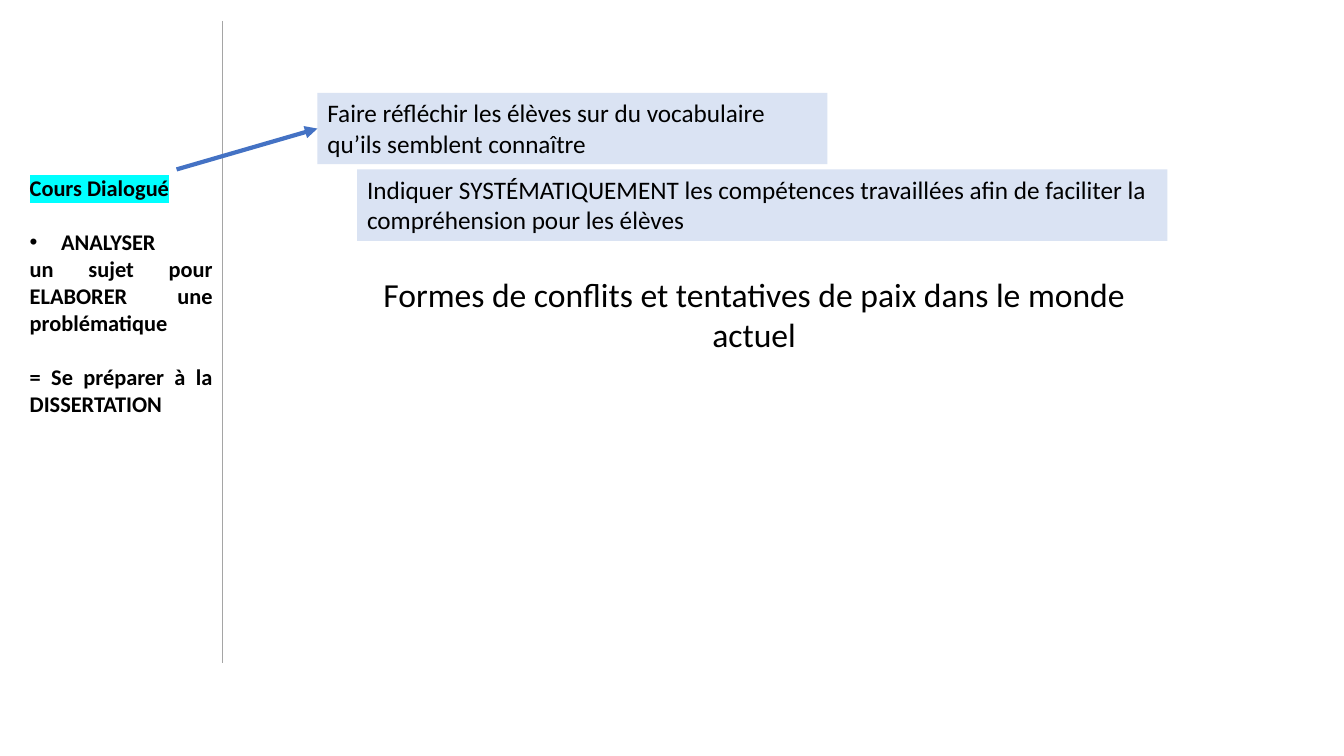
import pptx
import pptx.util
import pptx.dml.color
import pptx.enum.shapes
import pptx.enum.text
import pptx.oxml
import pptx.oxml.ns

Cm, Pt = pptx.util.Cm, pptx.util.Pt
Align = pptx.enum.text.PP_ALIGN
BLACK, PALE, BLUE, GREY, CYAN = "000000", "DAE3F3", "4472C4", "A5A5A5", "00FFFF"


def tint(code):
    """Turn a hex string into a colour."""
    return pptx.dml.color.RGBColor.from_string(code)


def node(tag, **attrs):
    """Make a drawing element with the given attributes."""
    item = pptx.oxml.parse_xml(f"<a:{tag} {pptx.oxml.ns.nsdecls('a')}/>")
    for key, value in attrs.items():
        item.set(key, value)
    return item


def write(para, text, size, bold=False, mark=None):
    """Add one run to a paragraph, highlighted if a mark colour is given."""
    run = para.add_run()
    run.text = text
    font = run.font
    font.name, font.size, font.bold = "Calibri", Pt(size), bold
    font.color.rgb = tint(BLACK)
    if mark:
        light = node("highlight")
        light.append(node("srgbClr", val=mark))
        run._r.rPr.find(pptx.oxml.ns.qn("a:solidFill")).addnext(light)


def frame(slide, box):
    """Add a wrapping text box and return its text frame."""
    text = slide.shapes.add_textbox(*map(Cm, box)).text_frame
    text.word_wrap = True
    return text


def draw_line(slide, start, end, color, width, arrow=False):
    """Draw a straight line, with an arrowhead at its end if asked."""
    line = slide.shapes.add_connector(
        pptx.enum.shapes.MSO_CONNECTOR.STRAIGHT, *map(Cm, start + end))
    line.line.color.rgb = tint(color)
    line.line.width = Pt(width)
    if arrow:
        line.line._get_or_add_ln().append(node("tailEnd", type="triangle"))
    line._element.spPr.append(node("effectLst"))


def draw_side(slide, box):
    """Write the skills column and draw the rule along its right edge."""
    left, top, width, _ = box
    size, gap = 16, 19.5
    rows = [
        ("Cours Dialogué", 0, CYAN, False),
        ("ANALYSER", gap, None, True),
        ("un sujet pour ELABORER une problématique", 0, None, False),
        ("= Se préparer à la DISSERTATION", gap, None, False),
    ]
    text = frame(slide, box)
    for index, (words, before, mark, dot) in enumerate(rows):
        para = text.add_paragraph() if index else text.paragraphs[0]
        para.alignment = Align.JUSTIFY
        if dot:
            props = para._p.get_or_add_pPr()
            props.set("marL", str(Cm(0.79)))
            props.set("indent", str(-Cm(0.79)))
            props.append(node("buFont", typeface="Arial"))
            props.append(node("buChar", char="•"))
        if before:
            para.space_before = Pt(before)
        write(para, words, size, True, mark)
    edge = left + width
    draw_line(slide, (edge, top - 3.74), (edge, top + 12.44), GREY, 1)


def draw_title(slide, box):
    """Write the centred subject of the lesson."""
    para = frame(slide, box).paragraphs[0]
    para.alignment = Align.CENTER
    write(para, "Formes de conflits et tentatives de paix dans le monde actuel", 24)


def draw_note(slide, box, words):
    """Draw a pale box holding one piece of advice."""
    note = slide.shapes.add_shape(
        pptx.enum.shapes.MSO_SHAPE.RECTANGLE, *map(Cm, box))
    note.shadow.inherit = False
    note.fill.solid()
    note.fill.fore_color.rgb = tint(PALE)
    note.line.fill.background()
    text = note.text_frame
    text.word_wrap = True
    text.vertical_anchor = pptx.enum.text.MSO_ANCHOR.TOP
    para = text.paragraphs[0]
    para.alignment = Align.LEFT
    write(para, words, 18)


def main():
    """Build the slide and save it."""
    deck = pptx.Presentation()
    deck.slide_width, deck.slide_height = Cm(33.87), Cm(19.05)
    slide = deck.slides.add_slide(deck.slide_layouts[6])
    side = (0.5, 4.27, 5.11, 6.4)
    think = (8, 2.34, 12.85, 1.8)
    skills = (9, 4.27, 20.42, 1.8)
    draw_side(slide, side)
    draw_title(slide, (9.1, 6.78, 19.81, 2.31))
    draw_note(slide, think,
              "Faire réfléchir les élèves sur du vocabulaire qu’ils semblent connaître")
    draw_line(slide, (4.45, side[1]), (think[0], think[1] + think[3] / 2),
              BLUE, 3, arrow=True)
    draw_note(slide, skills,
              "Indiquer SYSTÉMATIQUEMENT les compétences travaillées afin de "
              "faciliter la compréhension pour les élèves")
    deck.save("out.pptx")


if __name__ == "__main__":
    main()
